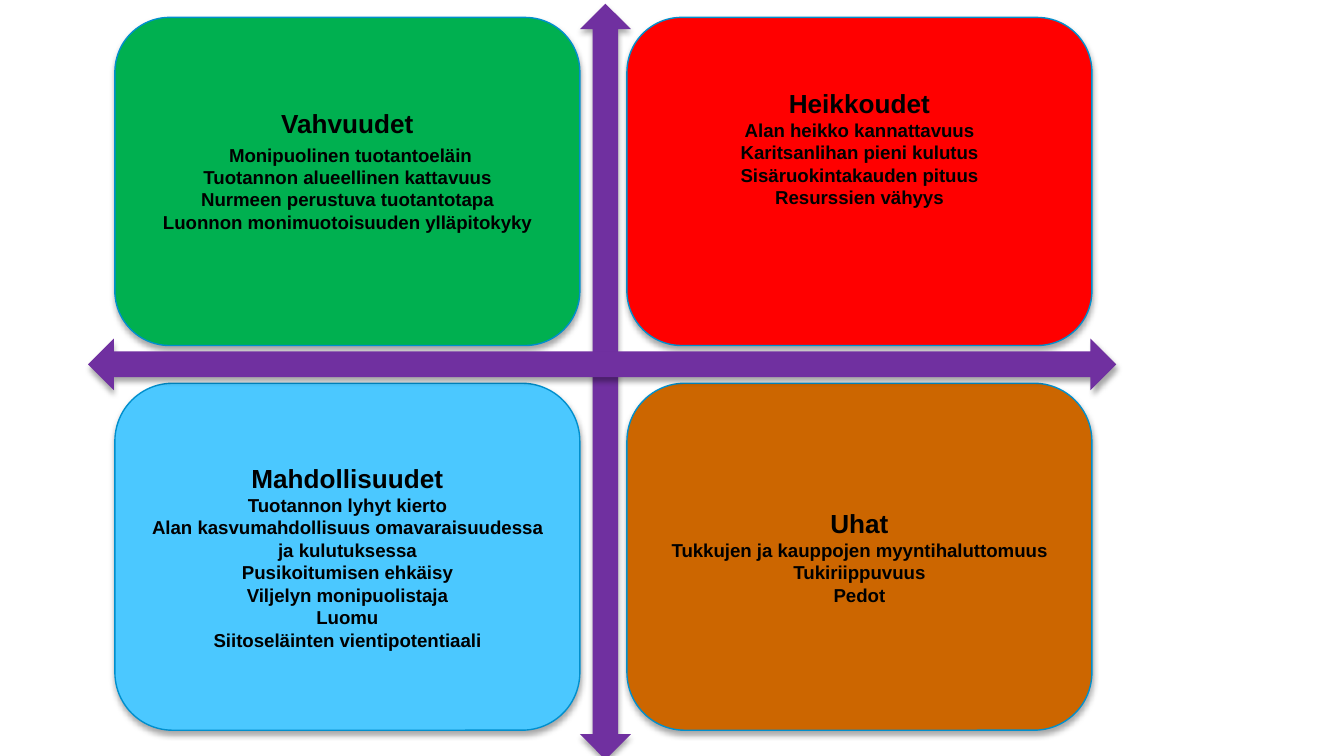
from dataclasses import dataclass

from lxml import etree
from pptx import Presentation, util as u
from pptx.dml.color import RGBColor
from pptx.enum import shapes, text
from pptx.oxml.ns import qn


@dataclass(frozen=True)
class Theme:
    """Colours, font and type sizes."""
    font: str = "Arial"
    ink: str = "000000"
    edge: str = "008FCD"
    arrow: str = "7030A0"
    green: str = "00B050"
    red: str = "FF0000"
    blue: str = "4BC8FF"
    brown: str = "CC6600"
    head: float = 14
    body: float = 10
    rule: float = 0.75


T = Theme()
WIDE = u.Inches(10)
HIGH = WIDE * 9 // 16
COL, ROW = WIDE / 100, HIGH / 100
SHAPE = shapes.MSO_SHAPE
MATRIX = (6.55, 0.5, 76.5, 100)
CARDS = (
    (0, 0, T.green, "Vahvuudet",
     ("Monipuolinen tuotantoeläin", "Tuotannon alueellinen kattavuus",
      "Nurmeen perustuva tuotantotapa",
      "Luonnon monimuotoisuuden ylläpitokyky"), 1, 2.5, 3.3),
    (1, 0, T.red, "Heikkoudet",
     ("Alan heikko kannattavuus", "Karitsanlihan pieni kulutus",
      "Sisäruokintakauden pituus", "Resurssien vähyys"), 3),
    (0, 1, T.blue, "Mahdollisuudet",
     ("Tuotannon lyhyt kierto",
      "Alan kasvumahdollisuus omavaraisuudessa ja kulutuksessa",
      "Pusikoitumisen ehkäisy", "Viljelyn monipuolistaja", "Luomu",
      "Siitoseläinten vientipotentiaali")),
    (1, 1, T.brown, "Uhat",
     ("Tukkujen ja kauppojen myyntihaluttomuus", "Tukiriippuvuus",
      "Pedot")),
)


def shade(shape):
    """Give a shape a soft shadow straight below it."""
    shape.shadow.inherit = False
    effect = shape._element.spPr.find(qn("a:effectLst"))
    outer = etree.SubElement(effect, qn("a:outerShdw"), blurRad="40000",
                             dist="23000", dir="5400000", rotWithShape="0")
    tint = etree.SubElement(outer, qn("a:srgbClr"), val=T.ink)
    etree.SubElement(tint, qn("a:alpha"), val="35000")


def block(slide, kind, box, fill, edge=None):
    """Draw a filled, shaded shape in a box of columns and rows."""
    left, top, wide, high = box
    shape = slide.shapes.add_shape(kind, round(left * COL), round(top * ROW),
                                   round(wide * COL), round(high * ROW))
    shape.fill.solid()
    shape.fill.fore_color.rgb = RGBColor.from_string(fill)
    if edge:
        shape.line.color.rgb = RGBColor.from_string(edge)
        shape.line.width = u.Pt(T.rule)
    else:
        shape.line.fill.background()
    shade(shape)
    return shape


def write(para, words, size=T.body, bold=True, color=T.ink, before=0, inset=0):
    """Fill a centred paragraph with formatted text."""
    para.alignment = text.PP_ALIGN.CENTER
    if before:
        para.space_before = u.Pt(before)
    if inset:
        para._p.get_or_add_pPr().set("marL", str(u.Pt(inset)))
    run = para.add_run()
    run.text = words
    run.font.name, run.font.size, run.font.bold = T.font, u.Pt(size), bold
    run.font.color.rgb = RGBColor.from_string(color)


def card(slide, box, fill, title, items, lift=0, gap=0, inset=0):
    """Place one quadrant, its text raised by half of lift lines."""
    frame = block(slide, SHAPE.ROUNDED_RECTANGLE, box, fill, T.edge).text_frame
    frame.word_wrap = True
    frame.vertical_anchor = text.MSO_ANCHOR.MIDDLE
    frame.margin_bottom = u.Inches(0.05) + lift * u.Pt(T.body * 1.2)
    write(frame.paragraphs[0], title, size=T.head)
    first, *others = items
    write(frame.add_paragraph(), first, before=gap, inset=inset)
    for item in others:
        write(frame.add_paragraph(), item)


def matrix(slide, box):
    """Place the four quadrants and the two crossing axes."""
    left, top, wide, high = box
    cols = (left + 2, left + 40.1)
    rows = ((top + 1.8, 43.4), (top + 50.2, 45.9))
    for col, row, *rest in CARDS:
        y, tall = rows[row]
        card(slide, (cols[col], y, 34.6, tall), *rest)
    block(slide, SHAPE.UP_DOWN_ARROW,
          (left + 36.6, top, 3.8, high), T.arrow)
    block(slide, SHAPE.LEFT_RIGHT_ARROW,
          (left, top + 44.3, wide, 6.8), T.arrow)


def main():
    """Build and save the slide."""
    deck = Presentation()
    deck.slide_width, deck.slide_height = WIDE, HIGH
    matrix(deck.slides.add_slide(deck.slide_layouts[6]), MATRIX)
    deck.save("out.pptx")


if __name__ == "__main__":
    main()
